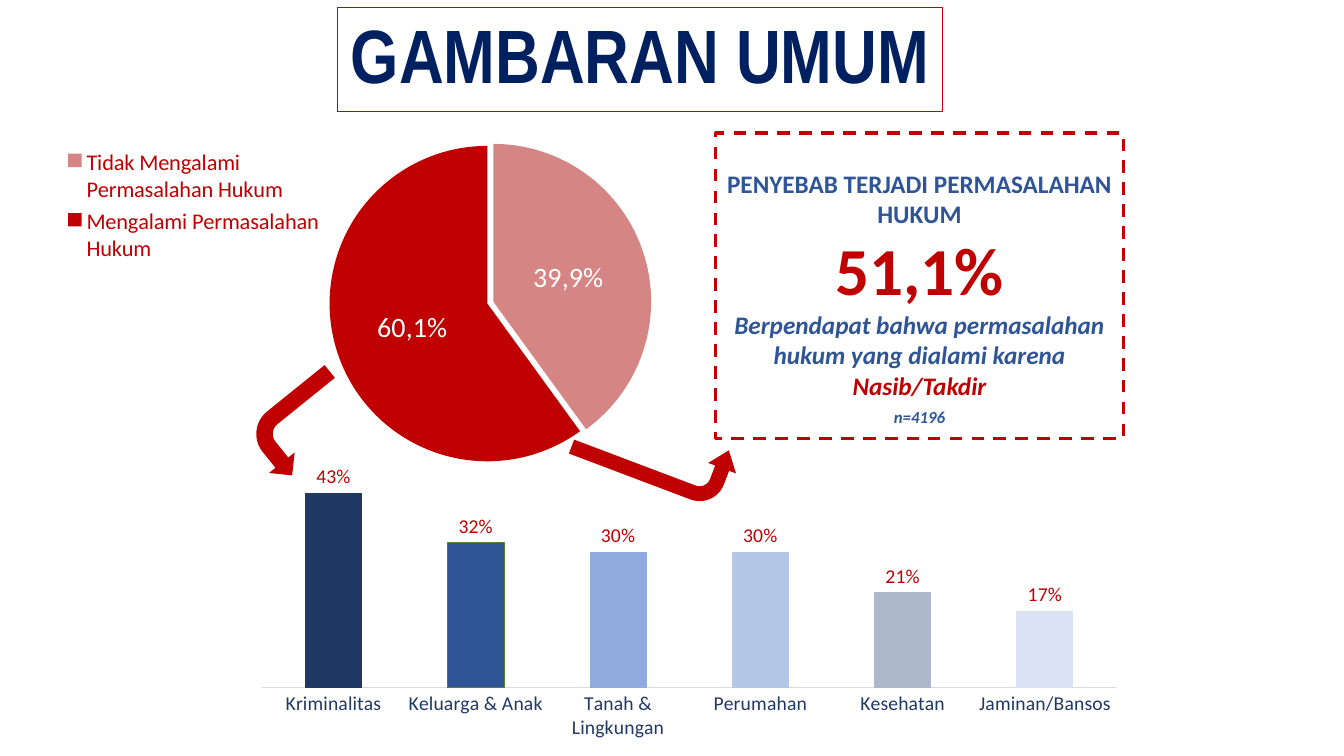
from pptx import Presentation
from pptx.chart.data import CategoryChartData
from pptx.dml.color import RGBColor
from pptx.enum.chart import XL_CHART_TYPE as CT, XL_LABEL_POSITION as LP
from pptx.enum.chart import XL_LEGEND_POSITION, XL_TICK_MARK
from pptx.enum.dml import MSO_LINE
from pptx.enum.shapes import MSO_SHAPE as SH
from pptx.enum.text import MSO_ANCHOR, PP_ALIGN
from pptx.oxml import parse_xml
from pptx.oxml.ns import nsdecls, qn
from pptx.util import Inches, Pt

RED = RGBColor(0xC0, 0x00, 0x00)
PINK = RGBColor(0xD5, 0x85, 0x83)
NAVY = RGBColor(0x00, 0x20, 0x60)
INK = RGBColor(0x20, 0x38, 0x64)
BLUE = RGBColor(0x2F, 0x55, 0x97)
SKY = RGBColor(0x8F, 0xAA, 0xDC)
PALE = RGBColor(0xB4, 0xC7, 0xE7)
SLATE = RGBColor(0xAD, 0xB9, 0xCA)
MIST = RGBColor(0xDA, 0xE3, 0xF3)
GREEN = RGBColor(0x53, 0x80, 0x35)
GREY = RGBColor(0xD9, 0xD9, 0xD9)
WHITE = RGBColor(0xFF, 0xFF, 0xFF)


def manual_layout(x, y, w, h, inner=False):
    target = '<c:layoutTarget val="inner"/>' if inner else ''
    return parse_xml(
        f'<c:layout {nsdecls("c")}><c:manualLayout>{target}'
        '<c:xMode val="edge"/><c:yMode val="edge"/>'
        f'<c:x val="{x}"/><c:y val="{y}"/><c:w val="{w}"/><c:h val="{h}"/>'
        '</c:manualLayout></c:layout>')


class SlideBuilder:
    font = "Calibri"

    def __init__(self, prs):
        self.s = prs.slides.add_slide(prs.slide_layouts[5])

    def style(self, font, size, color, bold=False, italic=False, name=None):
        font.name, font.size = name or self.font, Pt(size)
        font.bold, font.italic = bold, italic
        font.color.rgb = color

    def run(self, p, text, *style, **more):
        r = p.add_run()
        r.text = text
        self.style(r.font, *style, **more)

    def title(self, text, *box):
        sp = self.s.shapes.title
        sp.left, sp.top, sp.width, sp.height = map(Inches, box)
        sp.line.color.rgb, sp.line.width = RED, Pt(0.75)
        tf = sp.text_frame
        tf.vertical_anchor = MSO_ANCHOR.MIDDLE
        p = tf.paragraphs[0]
        p.alignment, p.line_spacing = PP_ALIGN.CENTER, 0.9
        self.run(p, text, 54, NAVY, True, name="Arial Narrow")

    def shape(self, kind, *box):
        sp = self.s.shapes.add_shape(kind, *map(Inches, box))
        sp.shadow.inherit = False
        return sp

    def callout(self, paragraphs, *box):
        sp = self.shape(SH.RECTANGLE, *box)
        sp.fill.background()
        sp.line.color.rgb, sp.line.width = RED, Pt(2.25)
        sp.line.dash_style = MSO_LINE.DASH
        tf = sp.text_frame
        tf.word_wrap, tf.vertical_anchor = True, MSO_ANCHOR.TOP
        tf.margin_top = Inches(0.35)
        for i, (before, runs) in enumerate(paragraphs):
            p = tf.add_paragraph() if i else tf.paragraphs[0]
            p.alignment, p.space_before = PP_ALIGN.CENTER, Pt(before)
            for text, *style in runs:
                self.run(p, text, *style)

    def bent_arrow(self, rotation, bend, *box):
        sp = self.shape(SH.BENT_ARROW, *box)
        sp.adjustments[2] = bend
        sp.rotation = rotation
        sp.element.spPr.find(qn("a:xfrm")).set("flipH", "1")
        sp.fill.solid()
        sp.fill.fore_color.rgb = RED
        sp.line.fill.background()

    def chart(self, kind, values, colors, plot_box, *box):
        data = CategoryChartData()
        data.categories = list(values)
        data.add_series("Series 1", list(values.values()))
        chart = self.s.shapes.add_chart(kind, *map(Inches, box), data).chart
        chart.has_title = chart.has_legend = False
        chart.font.name, chart.font.size = self.font, Pt(10)
        area = chart._chartSpace.chart.plotArea
        for old in area.findall(qn("c:layout")):
            area.remove(old)
        area.insert(0, manual_layout(*plot_box, inner=True))
        chart.plots[0].vary_by_categories = False
        series = chart.plots[0].series[0]
        series.format.line.fill.background()
        for i, color in enumerate(colors):
            fmt = series.points[i].format
            fmt.fill.solid()
            fmt.fill.fore_color.rgb = color
            fmt.line.fill.background()
        return chart, series

    def pie(self, values, colors, labels, *box):
        chart, series = self.chart(
            CT.PIE, values, colors, (0.313, 0.054, 0.375, 0.729), *box)
        chart.plots[0].vary_by_categories = True
        series._element.find(qn("c:spPr")).addnext(
            parse_xml(f'<c:explosion {nsdecls("c")} val="2"/>'))
        for i, text in enumerate(labels):
            label = series.points[i].data_label
            self.run(label.text_frame.paragraphs[0], text, 20, WHITE)
            label.position = LP.CENTER
        chart.has_legend = True
        legend = chart.legend
        legend.position = XL_LEGEND_POSITION.RIGHT
        legend.include_in_layout = False
        self.style(legend.font, 16, RED)
        legend._element.find(qn("c:legendPos")).addnext(
            manual_layout(0.0, 0.06, 0.31, 0.28))

    def columns(self, values, colors, outlined, *box):
        chart, series = self.chart(
            CT.COLUMN_CLUSTERED, values, colors,
            (0.084, 0.11, 0.897, 0.496), *box)
        plot = chart.plots[0]
        plot.gap_width, plot.overlap = 150, -25
        line = series.points[outlined].format.line
        line.color.rgb, line.width = GREEN, Pt(1)
        plot.has_data_labels = True
        labels = plot.data_labels
        labels.show_value, labels.position = True, LP.OUTSIDE_END
        labels.number_format, labels.number_format_is_linked = "0%", False
        self.style(labels.font, 14, RED)
        axis = chart.value_axis
        axis.minimum_scale, axis.maximum_scale = 0, 0.45
        axis.has_major_gridlines = axis.visible = False
        axis = chart.category_axis
        axis.major_tick_mark = XL_TICK_MARK.NONE
        axis.format.line.color.rgb = GREY
        axis.format.line.width = Pt(0.75)
        self.style(axis.tick_labels.font, 14, INK)


def main():
    prs = Presentation()
    prs.slide_width, prs.slide_height = Inches(13.33), Inches(7.5)
    b = SlideBuilder(prs)

    # Heading
    b.title("GAMBARAN UMUM", 3.35, 0.07, 6, 1.04)

    # Share of people with legal problems
    b.pie({"Tidak Mengalami Permasalahan Hukum": 40,
           "Mengalami Permasalahan Hukum": 60},
          [PINK, RED], ["39,9%", "60,1%"], 0.6, 1.17, 8.52, 4.38)

    # Kinds of legal problems
    b.columns({"Kriminalitas": 0.43, "Keluarga & Anak": 0.32,
               "Tanah & Lingkungan": 0.3, "Perumahan": 0.3,
               "Kesehatan": 0.21, "Jaminan/Bansos": 0.17},
              [INK, BLUE, SKY, PALE, SLATE, MIST], 1,
              1.81, 4.35, 9.44, 4.08)

    # Cause of the problems
    b.callout([
        (0, [("PENYEBAB TERJADI PERMASALAHAN HUKUM", 18, BLUE, True)]),
        (0, [("51,1%", 48, RED, True)]),
        (0, [("Berpendapat bahwa permasalahan hukum yang dialami karena ",
              18, BLUE, True, True),
             ("Nasib/Takdir", 18, RED, True, True)]),
        (5, [("n=4196", 12, BLUE, True, True)]),
    ], 7.1, 1.32, 4.04, 3.03)

    # Arrows from the pie to the details
    b.bent_arrow(231.1, 0.25, 2.67, 3.67, 0.65, 1.1)
    b.bent_arrow(110.7, 0.32, 6.21, 3.7, 0.59, 1.62)

    prs.save("out.pptx")


if __name__ == "__main__":
    main()
